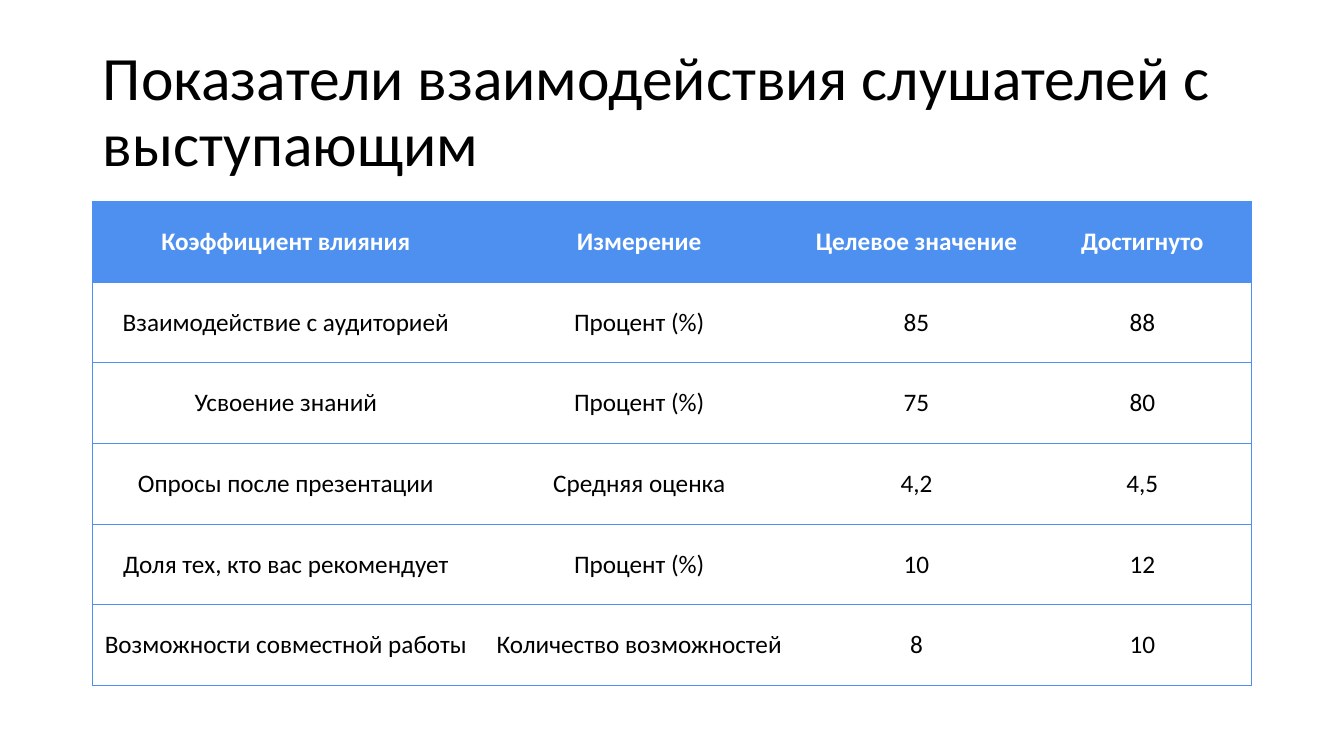
import pptx
import pptx.dml.color
import pptx.enum.text
import pptx.oxml
import pptx.oxml.ns
import pptx.util

Inches = pptx.util.Inches
ALIGN = pptx.enum.text.PP_ALIGN
MIDDLE = pptx.enum.text.MSO_ANCHOR.MIDDLE

# Content
TITLE = "Показатели взаимодействия слушателей с выступающим"
METRICS = [
    ("Коэффициент влияния", "Измерение", "Целевое значение", "Достигнуто"),
    ("Взаимодействие с аудиторией", "Процент (%)", "85", "88"),
    ("Усвоение знаний", "Процент (%)", "75", "80"),
    ("Опросы после презентации", "Средняя оценка", "4,2", "4,5"),
    ("Доля тех, кто вас рекомендует", "Процент (%)", "10", "12"),
    ("Возможности совместной работы", "Количество возможностей", "8", "10"),
]
COLUMN_WIDTHS = [3.83, 3.18, 2.32, 2.16]
ROW_HEIGHT = 0.8
LEFT, WIDTH = 0.92, 11.5
BLUE, WHITE, BLACK = "4D90EF", "FFFFFF", "000000"


def color(hex_code):
    return pptx.dml.color.RGBColor.from_string(hex_code)


def write(frame, text, size=18, ink=BLACK, bold=False, align=ALIGN.CENTER, spacing=None):
    frame.word_wrap = True
    paragraph = frame.paragraphs[0]
    paragraph.alignment = align
    paragraph.line_spacing = spacing
    run = paragraph.add_run()
    run.text = text
    run.font.name = "Calibri"
    run.font.size = pptx.util.Pt(size)
    run.font.bold = bold
    run.font.color.rgb = color(ink)


def set_borders(cell, visible):
    """Draw the named sides in blue and clear the others."""
    properties = cell._tc.get_or_add_tcPr()
    for position, side in enumerate("LRTB"):
        if side in visible:
            paint = f'<a:solidFill><a:srgbClr val="{BLUE}"/></a:solidFill>'
        else:
            paint = "<a:noFill/>"
        line = pptx.oxml.parse_xml(
            f'<a:ln{side} {pptx.oxml.ns.nsdecls("a")} w="12700">{paint}</a:ln{side}>'
        )
        properties.insert(position, line)


deck = pptx.Presentation()
deck.slide_width, deck.slide_height = Inches(13.33), Inches(7.5)
slide = deck.slides.add_slide(deck.slide_layouts[5])

# Title
title = slide.shapes.title
title.left, title.top = Inches(LEFT), Inches(0.4)
title.width, title.height = Inches(WIDTH), Inches(1.45)
title.text_frame.auto_size = pptx.enum.text.MSO_AUTO_SIZE.NONE
title.text_frame.vertical_anchor = MIDDLE
write(title.text_frame, TITLE, size=44, align=ALIGN.LEFT, spacing=0.9)

# Metrics table
metrics = slide.shapes.add_table(
    len(METRICS), len(COLUMN_WIDTHS),
    Inches(LEFT), Inches(2), Inches(WIDTH), Inches(ROW_HEIGHT * len(METRICS)),
).table
metrics.horz_banding = False
for column, width in zip(metrics.columns, COLUMN_WIDTHS):
    column.width = Inches(width)

last_column = len(COLUMN_WIDTHS) - 1
for r, values in enumerate(METRICS):
    metrics.rows[r].height = Inches(ROW_HEIGHT)
    header = r == 0
    for c, value in enumerate(values):
        cell = metrics.cell(r, c)
        cell.vertical_anchor = MIDDLE
        cell.fill.solid()
        cell.fill.fore_color.rgb = color(BLUE if header else WHITE)
        write(cell.text_frame, value, ink=WHITE if header else BLACK, bold=header)
        outer_sides = ("L" if c == 0 else "") + ("R" if c == last_column else "")
        set_borders(cell, "TB" + outer_sides)

deck.save("out.pptx")
